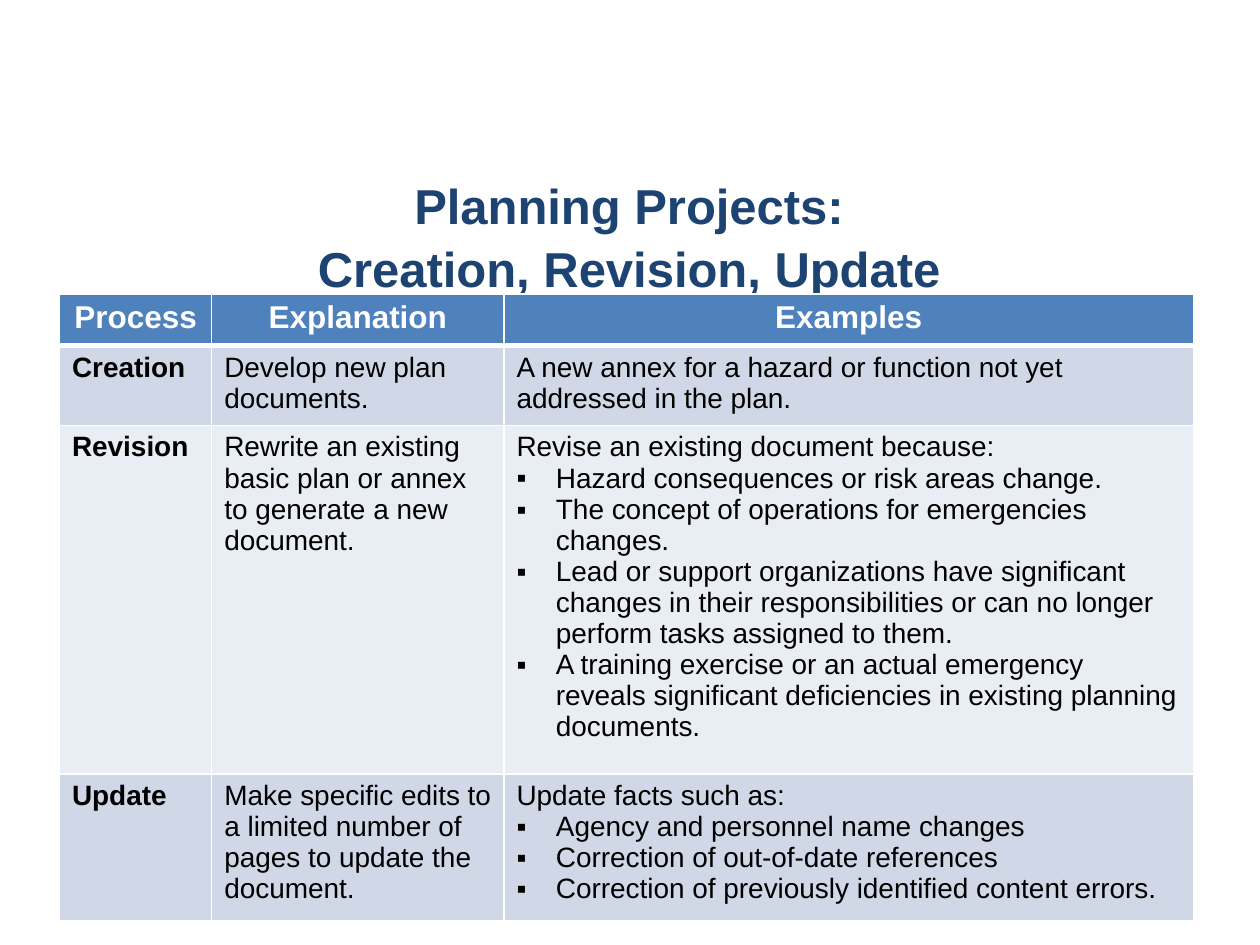
from lxml import etree
from pptx import Presentation
from pptx.dml.color import RGBColor
from pptx.enum import text
from pptx.oxml.ns import qn
from pptx.util import Pt

COLORS = {"title": "1C4372", "header": "4F81BD", "band": "D0D8E8",
          "light band": "E9EDF4", "white": "FFFFFF", "black": "000000"}
FONT = "Arial"
BULLET = "▪"
INDENT = 22.5

TITLE = "Planning Projects:\vCreation, Revision, Update"
HEADINGS = ["Process", "Explanation", "Examples"]
# Process, explanation, opening line of the examples, bulleted examples
PROCESSES = [
    ("Creation", "Develop new plan documents.",
     "A new annex for a hazard or function not yet addressed in the plan.", []),
    ("Revision",
     "Rewrite an existing basic plan or annex to generate a new document.",
     "Revise an existing document because:",
     ["Hazard consequences or risk areas change.",
      "The concept of operations for emergencies changes.",
      "Lead or support organizations have significant changes in their "
      "responsibilities or can no longer perform tasks assigned to them.",
      "A training exercise or an actual emergency reveals significant "
      "deficiencies in existing planning documents."]),
    ("Update",
     "Make specific edits to a limited number of pages to update the document.",
     "Update facts such as:",
     ["Agency and personnel name changes",
      "Correction of out-of-date references",
      "Correction of previously identified content errors."]),
]
COLUMN_WIDTHS = [87, 167, 394]
ROW_HEIGHTS = [29.5, 42.5, 185, 78]


def rgb(name):
    return RGBColor.from_string(COLORS[name])


def write(paragraph, words, size=16, color="black", bold=False,
          centered=False, bullet=False, spacing=None):
    paragraph.text = words
    if bullet:
        props = paragraph._p.get_or_add_pPr()
        props.set("marL", str(Pt(INDENT)))
        props.set("indent", str(-Pt(INDENT)))
        etree.SubElement(props, qn("a:buFont"), typeface=FONT)
        etree.SubElement(props, qn("a:buChar"), char=BULLET)
    if centered:
        paragraph.alignment = text.PP_ALIGN.CENTER
    if spacing:
        paragraph.line_spacing = spacing
    for run in paragraph.runs:
        run.font.name = FONT
        run.font.size = Pt(size)
        run.font.bold = bold
        run.font.color.rgb = rgb(color)


def style_cell(cell, fill, bottom=1):
    """Draw white borders, then fill; the schema wants the borders first."""
    props = cell._tc.get_or_add_tcPr()
    for side, width in (("L", 1), ("R", 1), ("T", 1), ("B", bottom)):
        line = etree.SubElement(props, qn(f"a:ln{side}"), w=str(Pt(width)))
        solid = etree.SubElement(line, qn("a:solidFill"))
        etree.SubElement(solid, qn("a:srgbClr"), val=COLORS["white"])
    cell.fill.solid()
    cell.fill.fore_color.rgb = rgb(fill)


def add_title(slide):
    frame = slide.shapes.add_textbox(Pt(35.5), Pt(108.5), Pt(648), Pt(50.5)).text_frame
    frame.word_wrap = True
    frame.vertical_anchor = text.MSO_ANCHOR.MIDDLE
    write(frame.paragraphs[0], TITLE, size=28, color="title", bold=True,
          centered=True, spacing=1.08)


def add_process_table(slide):
    table = slide.shapes.add_table(
        len(PROCESSES) + 1, len(HEADINGS), Pt(34), Pt(168),
        Pt(sum(COLUMN_WIDTHS)), Pt(sum(ROW_HEIGHTS))).table
    for column, width in zip(table.columns, COLUMN_WIDTHS):
        column.width = Pt(width)
    for row, height in zip(table.rows, ROW_HEIGHTS):
        row.height = Pt(height)

    for col, heading in enumerate(HEADINGS):
        cell = table.cell(0, col)
        style_cell(cell, "header", bottom=3)
        write(cell.text_frame.paragraphs[0], heading, size=18, color="white",
              bold=True, centered=True)

    for row, (process, explanation, opening, examples) in enumerate(PROCESSES, 1):
        for col, words in enumerate((process, explanation, opening)):
            cell = table.cell(row, col)
            style_cell(cell, "band" if row % 2 else "light band")
            write(cell.text_frame.paragraphs[0], words, bold=col == 0)
        for example in examples:
            write(cell.text_frame.add_paragraph(), example, bullet=True)


def main():
    deck = Presentation()
    deck.slide_width, deck.slide_height = Pt(720), Pt(540)
    slide = deck.slides.add_slide(deck.slide_layouts[6])
    add_title(slide)
    add_process_table(slide)
    deck.save("out.pptx")


if __name__ == "__main__":
    main()
